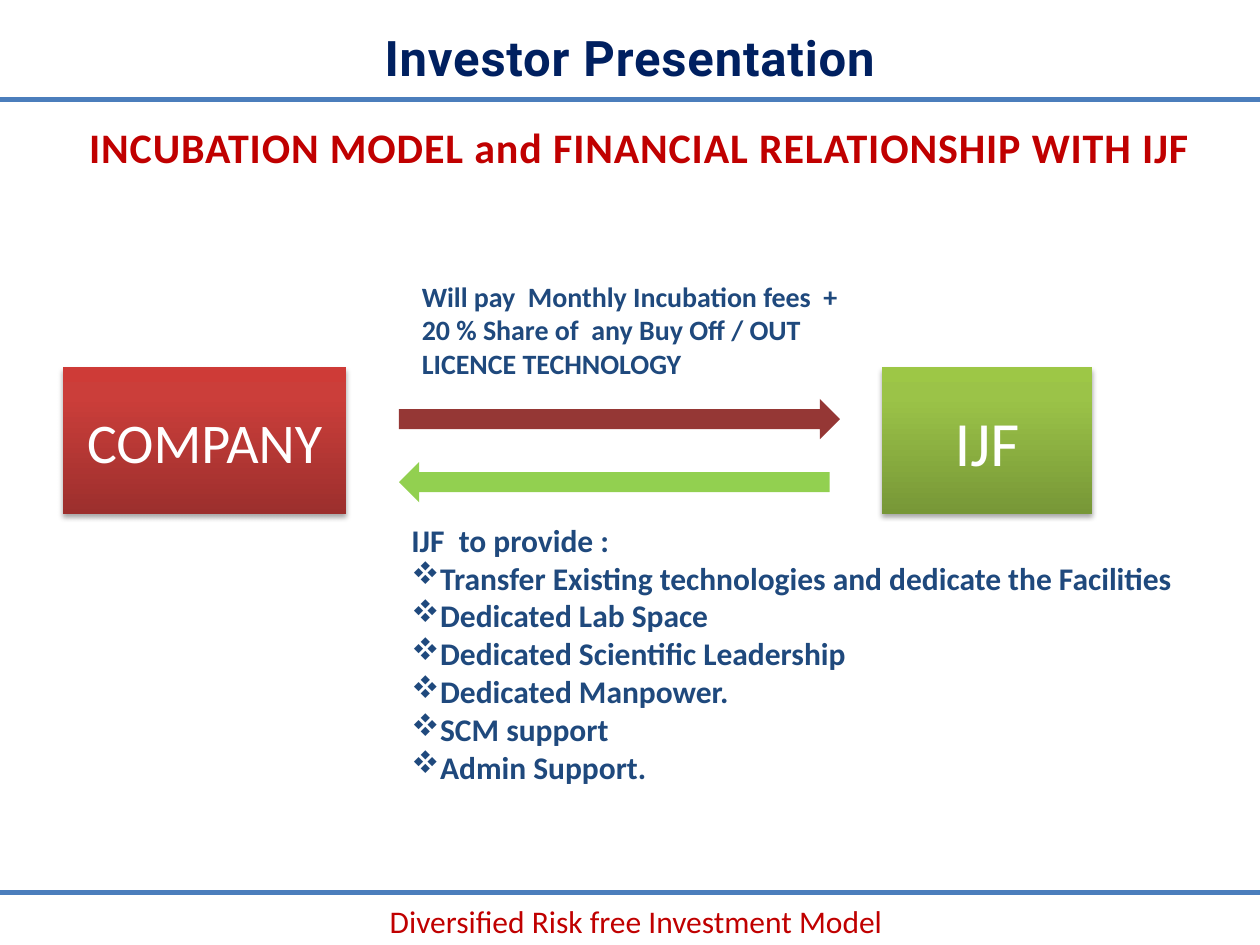
from collections import namedtuple
from dataclasses import dataclass

from lxml import etree
from pptx import Presentation
from pptx.dml.color import RGBColor
from pptx.enum import shapes, text
from pptx.oxml import ns
from pptx.util import Pt

Box = namedtuple("Box", "left top width height")


@dataclass(frozen=True)
class Theme:
    rule: str = "4B7EBC"
    navy: str = "002060"
    red: str = "C00000"
    blue: str = "1F497D"
    white: str = "FFFFFF"
    pay_arrow: str = "953735"
    provide_arrow: str = "92D050"
    # Gradients run from bottom to top
    company: tuple = ((0, "9C2F2D"), (80, "CB3E3A"), (100, "CE3B37"))
    partner: tuple = ((0, "779737"), (80, "9BC348"), (100, "9DC746"))
    heading_font: str = "Roboto"
    body_font: str = "Calibri"
    bullet_font: str = "Wingdings"
    title: int = 28
    subtitle: int = 24
    body: int = 18
    note: int = 16
    company_name: int = 32
    partner_name: int = 36


THEME = Theme()
PARTNER = "IJF"
CENTER = text.PP_ALIGN.CENTER
LEFT = text.PP_ALIGN.LEFT


def add_xml(parent, tag, **attributes):
    return etree.SubElement(parent, ns.qn(tag), attributes)


def points(box):
    return [Pt(value) for value in box]


def write(paragraph, words, size, color, bold=False, align=LEFT,
          font=THEME.body_font, spacing=0):
    paragraph.alignment = align
    run = paragraph.add_run()
    run.text = words
    run.font.name = font
    run.font.size = Pt(size)
    run.font.bold = bold
    run.font.color.rgb = RGBColor.from_string(color)
    if spacing:
        run.font._element.set("spc", str(int(spacing * 100)))


def add_text(slide, box, lines, size, color, bullets_from=None, **style):
    frame = slide.shapes.add_textbox(*points(box)).text_frame
    frame.word_wrap = True
    for index, line in enumerate(lines):
        paragraph = frame.add_paragraph() if index else frame.paragraphs[0]
        if bullets_from is not None and index >= bullets_from:
            properties = paragraph._p.get_or_add_pPr()
            properties.set("marL", "0")
            properties.set("indent", "0")
            # The letter v is the four-diamond bullet in Wingdings
            add_xml(properties, "a:buFont", typeface=THEME.bullet_font, charset="2")
            add_xml(properties, "a:buChar", char="v")
        write(paragraph, line, size, color, **style)


def add_rule(slide, left, top, width):
    line = slide.shapes.add_connector(
        shapes.MSO_CONNECTOR.STRAIGHT, Pt(left), Pt(top), Pt(left + width), Pt(top))
    line.line.color.rgb = RGBColor.from_string(THEME.rule)
    line.line.width = Pt(3)
    add_xml(line._element.spPr, "a:effectLst")


def add_party(slide, box, name, size, stops):
    """A party to the deal: gradient box with a soft shadow."""
    shape = slide.shapes.add_shape(shapes.MSO_SHAPE.RECTANGLE, *points(box))
    shape.line.fill.background()
    shape.fill.gradient()
    shape.fill.gradient_angle = 90
    stop_list = shape._element.spPr.find(".//" + ns.qn("a:gsLst"))
    for stop in list(stop_list):
        stop_list.remove(stop)
    for position, color in stops:
        stop = add_xml(stop_list, "a:gs", pos=str(position * 1000))
        add_xml(stop, "a:srgbClr", val=color)

    shape.shadow.inherit = False
    effects = shape._element.spPr.find(ns.qn("a:effectLst"))
    shadow = add_xml(effects, "a:outerShdw", blurRad=str(Pt(3.1)), dist=str(Pt(1.8)),
                     dir="5400000", rotWithShape="0")
    shadow_color = add_xml(shadow, "a:srgbClr", val="000000")
    add_xml(shadow_color, "a:alpha", val="35000")

    frame = shape.text_frame
    frame.word_wrap = True
    frame.vertical_anchor = text.MSO_ANCHOR.MIDDLE
    write(frame.paragraphs[0], name, size, THEME.white, align=CENTER)


def add_arrow(slide, box, color, rotation=0):
    arrow = slide.shapes.add_shape(shapes.MSO_SHAPE.RIGHT_ARROW, *points(box))
    arrow.rotation = rotation
    arrow.shadow.inherit = False
    arrow.fill.solid()
    arrow.fill.fore_color.rgb = RGBColor.from_string(color)
    arrow.line.fill.background()


def add_header(slide, box):
    add_rule(slide, box.left, box.top + 57, box.width)
    add_text(slide, Box(box.left + 60, box.top + 12, box.width - 120, 41),
             ["Investor Presentation"], THEME.title, THEME.navy, bold=True,
             align=CENTER, font=THEME.heading_font, spacing=0.5)
    add_text(slide, Box(box.left + 38.5, box.top + 66, 654, 36),
             [f"INCUBATION MODEL and FINANCIAL RELATIONSHIP WITH {PARTNER}"],
             THEME.subtitle, THEME.red, bold=True, align=CENTER, spacing=0.5)


def add_exchange(slide, box):
    left, top = box.left, box.top
    # Parties
    add_party(slide, Box(left + 468, top + 54, 120, 84), PARTNER,
              THEME.partner_name, THEME.partner)
    add_party(slide, Box(left, top + 54, 162, 84), "COMPANY",
              THEME.company_name, THEME.company)
    # What the company pays
    add_arrow(slide, Box(left + 192, top + 72, 252, 23), THEME.pay_arrow)
    add_text(slide, Box(left + 198, top, 252, 85),
             ["Will pay  Monthly Incubation fees  + 20 % Share of  any Buy Off / OUT "
              "LICENCE TECHNOLOGY"], THEME.note, THEME.blue, bold=True)
    # What the partner provides
    add_text(slide, Box(left + 192, top + 138, box.width - 192, 181),
             [f"{PARTNER}  to provide :",
              "Transfer Existing technologies and dedicate the Facilities",
              "Dedicated Lab Space",
              "Dedicated Scientific Leadership",
              "Dedicated Manpower.",
              "SCM support",
              "Admin Support."], THEME.body, THEME.blue, bullets_from=1, bold=True)
    add_arrow(slide, Box(left + 192, top + 108, 246, 23), THEME.provide_arrow, 180)


def add_footer(slide, box):
    add_rule(slide, box.left, box.top, box.width)
    add_text(slide, Box(box.left + 101.5, box.top + 2, 528, 29),
             ["Diversified Risk free Investment Model "],
             THEME.body, THEME.red, align=CENTER)


def main():
    presentation = Presentation()
    presentation.slide_width, presentation.slide_height = Pt(720), Pt(540)
    slide = presentation.slides.add_slide(presentation.slide_layouts[6])
    add_header(slide, Box(0, 0, 720, 102))
    add_exchange(slide, Box(36, 156, 654, 319))
    add_footer(slide, Box(0, 510, 720, 30))
    presentation.save("out.pptx")


if __name__ == "__main__":
    main()
